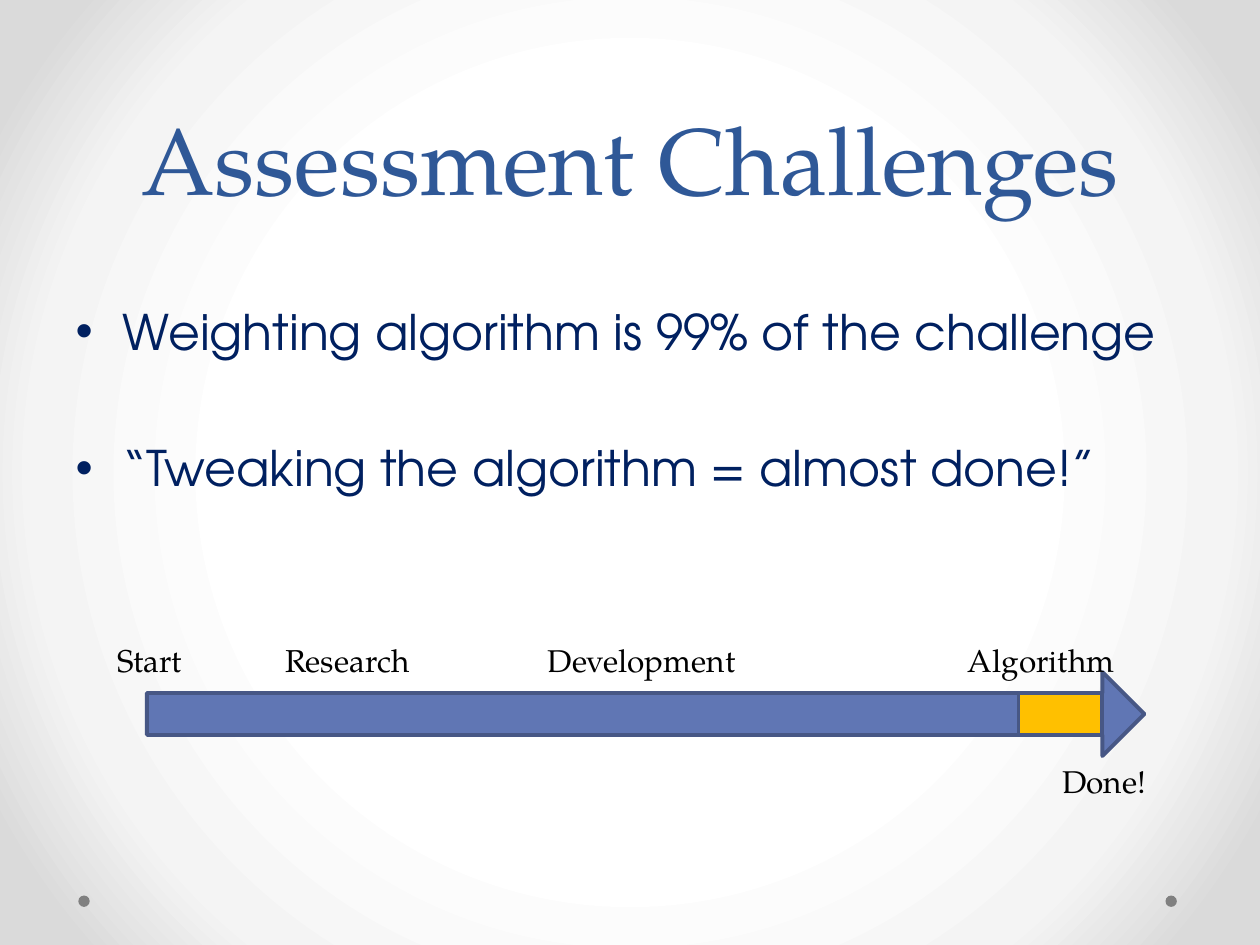
from pptx import Presentation
from pptx.dml.color import RGBColor
from pptx.enum.shapes import MSO_SHAPE as Preset
from pptx.enum.text import MSO_ANCHOR as Anchor, MSO_AUTO_SIZE as AutoSize, PP_ALIGN as Align
from pptx.oxml import parse_xml
from pptx.oxml.ns import nsdecls
from pptx.util import Pt

COLORS = {
    "title": "2F5897", "body": "002060", "label": "000000", "arrow": "6076B4",
    "outline": "475785", "algorithm": "FFC000", "dot": "808080",
}
BACKGROUND_STOPS = [(50, "FFFFFF"), (76, "F4F4F4"), (92, "DADADA")]
SERIF, SANS = "TeX Gyre Pagella", "TeX Gyre Adventor"


class SlideBuilder:
    def __init__(self, presentation):
        self.slide = presentation.slides.add_slide(presentation.slide_layouts[1])

    def background(self, stops):
        stop_xml = "".join(
            f'<a:gs pos="{position * 1000}"><a:srgbClr val="{color}"/></a:gs>'
            for position, color in stops
        )
        self.slide.element.cSld.insert(0, parse_xml(
            f'<p:bg {nsdecls("p", "a")}><p:bgPr><a:gradFill rotWithShape="1">'
            f'<a:gsLst>{stop_xml}</a:gsLst><a:path path="circle">'
            '<a:fillToRect l="50000" t="50000" r="50000" b="50000"/></a:path>'
            '</a:gradFill><a:effectLst/></p:bgPr></p:bg>'
        ))

    def place(self, shape, left, top, width, height):
        shape.left, shape.top = Pt(left), Pt(top)
        shape.width, shape.height = Pt(width), Pt(height)

    def run(self, paragraph, text, size, font, color):
        run = paragraph.add_run()
        run.text = text
        run.font.size, run.font.name = Pt(size), font
        run.font.color.rgb = RGBColor.from_string(COLORS[color])

    def title(self, text, *box):
        shape = self.slide.shapes.title
        self.place(shape, *box)
        frame = shape.text_frame
        frame.auto_size, frame.vertical_anchor = AutoSize.NONE, Anchor.BOTTOM
        paragraph = frame.paragraphs[0]
        paragraph.alignment, paragraph.line_spacing = Align.CENTER, Pt(58)
        self.run(paragraph, text, 54, SERIF, "title")

    def bullets(self, items, *box):
        shape = self.slide.placeholders[1]
        self.place(shape, *box)
        frame = shape.text_frame
        frame.auto_size, frame.vertical_anchor = AutoSize.NONE, Anchor.TOP
        frame.margin_top = Pt(46)
        for index, text in enumerate(items):
            paragraph = frame.add_paragraph() if index else frame.paragraphs[0]
            paragraph.space_before = Pt(44.5 if index else 0)
            properties = paragraph._p.get_or_add_pPr()
            properties.set("marL", str(Pt(27)))
            properties.set("indent", str(Pt(-27)))
            properties.append(parse_xml(f'<a:buFont {nsdecls("a")} typeface="Arial"/>'))
            properties.append(parse_xml(f'<a:buChar {nsdecls("a")} char="•"/>'))
            self.run(paragraph, text, 28, SANS, "body")

    def shape(self, preset, fill, left, top, width, height, outline=None):
        shape = self.slide.shapes.add_shape(preset, Pt(left), Pt(top), Pt(width), Pt(height))
        shape.shadow.inherit = False
        shape.fill.solid()
        shape.fill.fore_color.rgb = RGBColor.from_string(COLORS[fill])
        if outline:
            shape.line.color.rgb = RGBColor.from_string(COLORS[outline])
            shape.line.width = Pt(2.25)
        else:
            shape.line.fill.background()

    def label(self, text, left, top, width):
        box = self.slide.shapes.add_textbox(Pt(left), Pt(top), Pt(width), Pt(29))
        frame = box.text_frame
        frame.word_wrap, frame.auto_size = True, AutoSize.SHAPE_TO_FIT_TEXT
        self.run(frame.paragraphs[0], text, 18, SERIF, "label")


def main():
    presentation = Presentation()
    presentation.slide_width, presentation.slide_height = Pt(720), Pt(540)
    builder = SlideBuilder(presentation)
    builder.background(BACKGROUND_STOPS)
    for left in (44.75, 666):
        builder.shape(Preset.OVAL, "dot", left, 511.75, 6.5, 6.5)

    builder.title("Assessment Challenges", 36, 0, 648, 126)
    builder.bullets([
        "Weighting algorithm is 99% of the challenge",
        "“Tweaking the algorithm = almost done!”",
    ], 36, 126, 648, 356)

    builder.shape(Preset.RIGHT_ARROW, "arrow", 84, 384, 570, 48, "outline")
    for text, left, top, width in [
        ("Start", 60, 363, 54),
        ("Research", 156, 363, 96),
        ("Development", 306, 363, 144),
        ("Algorithm", 546, 363, 102),
        ("Done!", 600, 432, 69),
    ]:
        builder.label(text, left, top, width)
    builder.shape(Preset.RECTANGLE, "algorithm", 582, 396, 48, 24, "outline")
    presentation.save("out.pptx")


if __name__ == "__main__":
    main()
